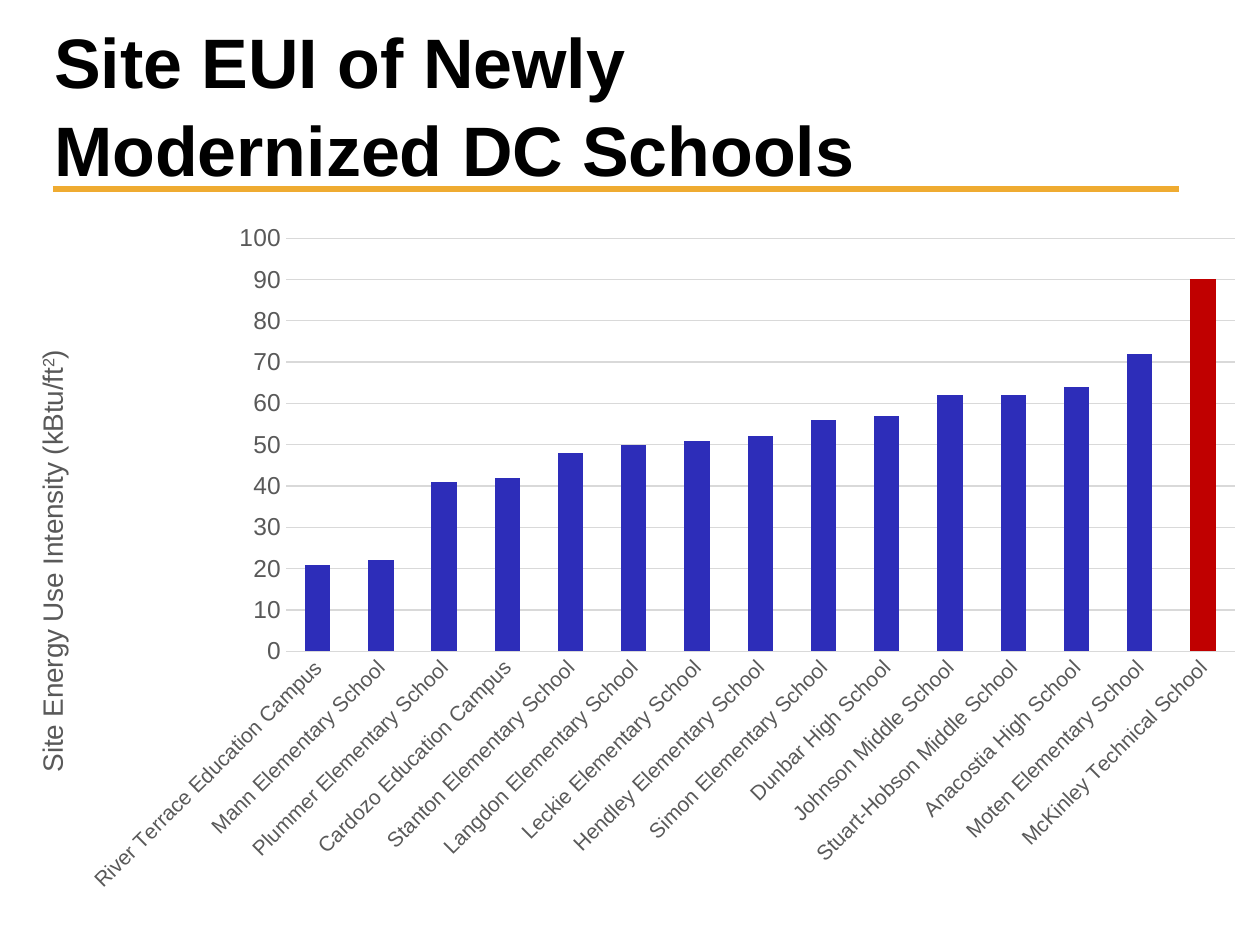
import pptx
import pptx.chart.data
import pptx.dml.color
import pptx.enum.chart
import pptx.enum.shapes
import pptx.enum.text
import pptx.oxml
import pptx.oxml.ns
import pptx.util

EMU_PER_PX = 9144  # 100 px to the inch

SCHOOLS = {
    "River Terrace Education Campus": 21,
    "Mann Elementary School": 22,
    "Plummer Elementary School": 41,
    "Cardozo Education Campus": 42,
    "Stanton Elementary School": 48,
    "Langdon Elementary School": 50,
    "Leckie Elementary School": 51,
    "Hendley Elementary School": 52,
    "Simon Elementary School": 56,
    "Dunbar High School": 57,
    "Johnson Middle School": 62,
    "Stuart-Hobson Middle School": 62,
    "Anacostia High School": 64,
    "Moten Elementary School": 72,
    "McKinley Technical School": 90,
}


def px(*lengths):
    return [pptx.util.Emu(length * EMU_PER_PX) for length in lengths]


def color(value):
    return pptx.dml.color.RGBColor.from_string(value)


def format_font(font, size, fill, **values):
    font.color.rgb = color(fill)
    for name, value in {"name": "Arial", "size": pptx.util.Pt(size), **values}.items():
        setattr(font, name, value)


def place(parent, index, **fractions):
    """Give a chart part a manual layout in fractions of the chart."""
    for layout in parent.xpath("c:layout"):
        parent.remove(layout)
    modes = {"xMode": "edge", "yMode": "edge"}
    if "w" in fractions:
        modes = {"layoutTarget": "inner", **modes}
    parts = "".join(f'<c:{tag} val="{value}"/>' for tag, value in {**modes, **fractions}.items())
    parent.insert(index, pptx.oxml.parse_xml(
        f'<c:layout {pptx.oxml.ns.nsdecls("c")}><c:manualLayout>{parts}</c:manualLayout></c:layout>'))


class SlideBuilder:
    ink, gray, grid, gold = "000000", "595959", "D9D9D9", "EFAB31"
    bar, highlight = "2D2DB9", "C00000"

    def __init__(self, deck):
        self.slide = deck.slides.add_slide(deck.slide_layouts[5])

    def rule(self, left, top, right):
        line = self.slide.shapes.add_connector(
            pptx.enum.shapes.MSO_CONNECTOR.STRAIGHT, *px(left, top, right, top))
        line.line.color.rgb = color(self.gold)
        line.line.width = pptx.util.Pt(4)
        line._element.spPr.append(
            pptx.oxml.parse_xml(f'<a:effectLst {pptx.oxml.ns.nsdecls("a")}/>'))

    def title(self, text, *bounds):
        box = self.slide.shapes.title
        for name, value in zip(("left", "top", "width", "height"), px(*bounds)):
            setattr(box, name, value)
        frame = box.text_frame
        frame.text = text
        frame_format = {
            "word_wrap": True,
            "auto_size": pptx.enum.text.MSO_AUTO_SIZE.NONE,
            "vertical_anchor": pptx.enum.text.MSO_ANCHOR.MIDDLE,
        }
        for name, value in frame_format.items():
            setattr(frame, name, value)
        para = frame.paragraphs[0]
        para.alignment = pptx.enum.text.PP_ALIGN.LEFT
        para.line_spacing = 1.05
        format_font(para.runs[0].font, 40, self.ink, bold=True)

    def column_chart(self, values, *bounds):
        data = pptx.chart.data.CategoryChartData()
        data.categories = list(values)
        data.add_series("Series 1", list(values.values()))
        chart = self.slide.shapes.add_chart(
            pptx.enum.chart.XL_CHART_TYPE.COLUMN_CLUSTERED, *px(*bounds), data).chart
        chart.has_legend = chart.has_title = False
        format_font(chart.font, 10, self.ink)
        plot = chart.plots[0]
        plot.gap_width, plot.vary_by_categories = 150, False
        series = plot.series[0]
        last = series.points[len(values) - 1]
        for item, fill in ((series, self.bar), (last, self.highlight)):
            item.format.fill.solid()
            item.format.fill.fore_color.rgb = color(fill)
        for axis, size in ((chart.category_axis, 12), (chart.value_axis, 14)):
            axis.major_tick_mark = axis.minor_tick_mark = pptx.enum.chart.XL_TICK_MARK.NONE
            axis.format.line.fill.background()
            format_font(axis.tick_labels.font, size, self.gray)
        for body in chart.element.xpath(".//c:catAx/c:txPr/a:bodyPr"):
            body.set("rot", "-2700000")
        place(chart.element.xpath("c:chart/c:plotArea")[0], 0, x=0.227, y=0.04, w=0.753, h=0.594)
        return chart

    def value_axis(self, axis, top, step, title_runs):
        """Set the scale, gridlines and title; title_runs holds (text, baseline) pairs."""
        axis.minimum_scale, axis.maximum_scale, axis.major_unit = 0, top, step
        axis.has_major_gridlines = True
        axis.major_gridlines.format.line.color.rgb = color(self.grid)
        axis.major_gridlines.format.line.width = pptx.util.Pt(0.75)
        frame = axis.axis_title.text_frame
        for text, baseline in title_runs:
            run = frame.paragraphs[0].add_run()
            run.text = text
            format_font(run.font, 16, self.gray, bold=False)
            run._r.get_or_add_rPr().set("baseline", str(baseline))
        frame._txBody.bodyPr.set("rot", "-5400000")
        frame._txBody.bodyPr.set("vert", "horz")
        place(axis.axis_title._element, 1, x=0.025, y=0.195)


def main():
    deck = pptx.Presentation()
    deck.slide_width, deck.slide_height = px(1000, 750)
    builder = SlideBuilder(deck)
    builder.rule(42, 150, 936)
    chart = builder.column_chart(SCHOOLS, 0, 167, 1000, 552)
    builder.value_axis(chart.value_axis, 100, 10, [
        ("Site Energy Use Intensity (kBtu/ft", 0), ("2", 30000), (")", 0)])
    builder.title("Site EUI of Newly Modernized DC Schools", 33, 27, 717, 108)
    deck.save("out.pptx")


if __name__ == "__main__":
    main()
